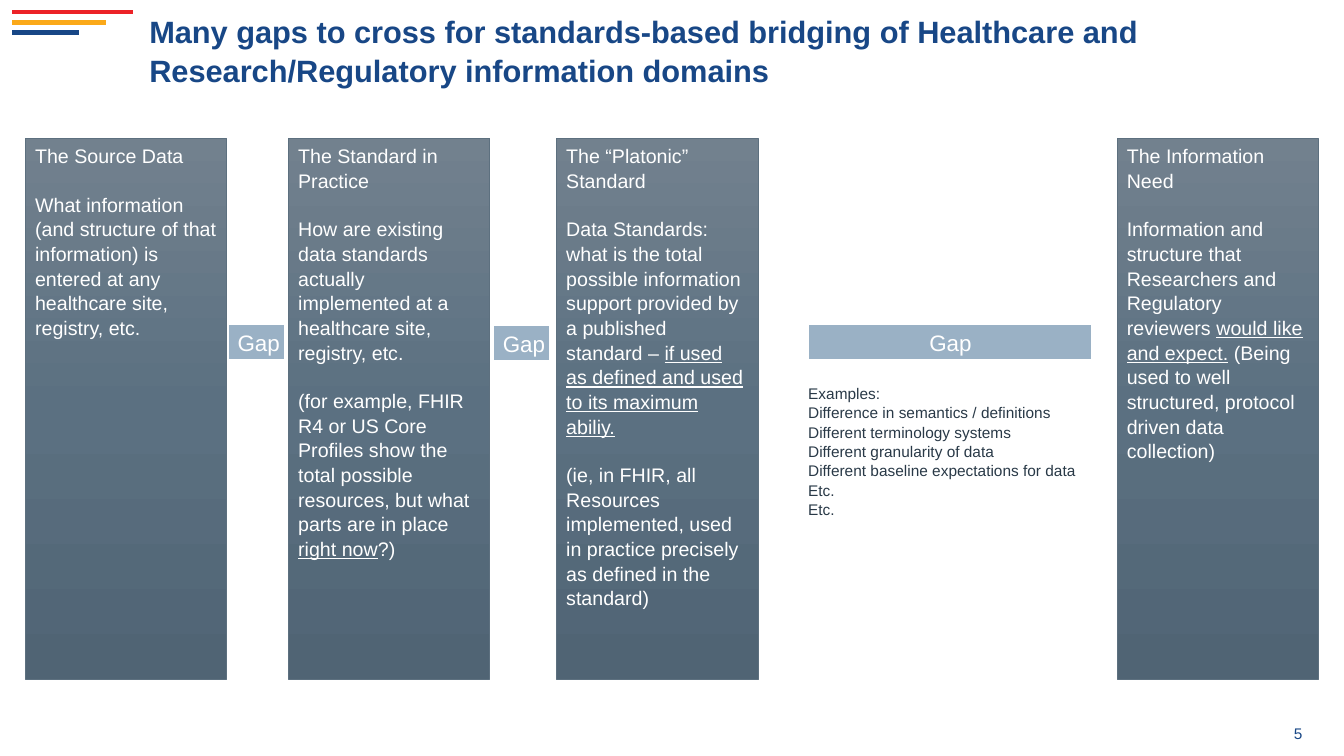
import copy
import dataclasses

import lxml.etree
import pptx
import pptx.dml.color
import pptx.enum.dml
import pptx.enum.shapes
import pptx.enum.text
import pptx.oxml.ns
import pptx.util

Pt = pptx.util.Pt
ALIGN = pptx.enum.text.PP_ALIGN
ANCHOR = pptx.enum.text.MSO_ANCHOR


def rgb(value):
    return pptx.dml.color.RGBColor.from_string(value)


@dataclasses.dataclass(frozen=True)
class Theme:
    font: str = "Arial"
    navy: str = "184786"
    red: str = "EC2227"
    amber: str = "FBA919"
    white: str = "FFFFFF"
    ink: str = "293947"
    gap_fill: str = "9AB1C5"
    column_line: str = "5D707F"
    column_gradient: tuple = ("72818E", "5B7081", "506474")
    title_size: float = 22
    gap_size: float = 16
    column_size: float = 14
    note_size: float = 11
    line_spacing: float = 1.05
    block_space: float = 16.9


class SlideBuilder:
    def __init__(self, slide, theme):
        self.slide = slide
        self.theme = theme

    def fill_text(self, frame, paragraphs, size, color, bold=False, align=ALIGN.LEFT,
                  anchor=ANCHOR.TOP, wrap=True, space=0, insets=(7.2, 3.6, 7.2, 3.6)):
        frame.word_wrap = wrap
        frame.auto_size = pptx.enum.text.MSO_AUTO_SIZE.NONE
        frame.vertical_anchor = anchor
        (frame.margin_left, frame.margin_top,
         frame.margin_right, frame.margin_bottom) = map(Pt, insets)
        for index, runs in enumerate(paragraphs):
            paragraph = frame.add_paragraph() if index else frame.paragraphs[0]
            paragraph.alignment = align
            paragraph.line_spacing = self.theme.line_spacing
            paragraph.space_before = Pt(space if index else 0)
            for text, underlined in runs:
                run = paragraph.add_run()
                run.text = text
                run.font.name = self.theme.font
                run.font.size = Pt(size)
                run.font.bold = bold
                run.font.underline = underlined
                run.font.color.rgb = rgb(color)

    def title(self, text, *box):
        shape = self.slide.shapes.title
        shape.left, shape.top, shape.width, shape.height = map(Pt, box)
        self.fill_text(shape.text_frame, [[(text, False)]], self.theme.title_size,
                       self.theme.navy, bold=True, insets=(0, 0, 0, 0))

    def text(self, lines, box, color, **options):
        shape = self.slide.shapes.add_textbox(*map(Pt, box))
        self.fill_text(shape.text_frame, [[(line, False)] for line in lines],
                       self.theme.note_size, color, **options)

    def rule(self, left, top, width, color):
        line = self.slide.shapes.add_connector(
            pptx.enum.shapes.MSO_CONNECTOR.STRAIGHT,
            Pt(left), Pt(top), Pt(left + width), Pt(top))
        line.line.color.rgb = rgb(color)
        line.line.width = Pt(3.5)
        lxml.etree.SubElement(line._element.spPr, pptx.oxml.ns.qn("a:effectLst"))

    def rectangle(self, box, line_color, line_width):
        shape = self.slide.shapes.add_shape(
            pptx.enum.shapes.MSO_SHAPE.RECTANGLE, *map(Pt, box))
        shape.shadow.inherit = False
        shape.line.color.rgb = rgb(line_color)
        shape.line.width = Pt(line_width)
        return shape

    def column(self, left, paragraphs):
        shape = self.rectangle((left, 98.6, 144, 386.6), self.theme.column_line, 0.5)
        shape.fill.gradient()
        shape.fill.gradient_angle = 270
        stop_list = next(shape._element.spPr.iter(pptx.oxml.ns.qn("a:gsLst")))
        stop_list.append(copy.deepcopy(stop_list[0]))
        for index, stop in enumerate(shape.fill.gradient_stops):
            stop.position = index / 2
            stop.color.rgb = rgb(self.theme.column_gradient[index])
        self.fill_text(shape.text_frame, paragraphs, self.theme.column_size,
                       self.theme.white, space=self.theme.block_space)

    def gap(self, left, top, width, align):
        shape = self.rectangle((left, top, width, 25.9), self.theme.white, 1.5)
        shape.fill.solid()
        shape.fill.fore_color.rgb = rgb(self.theme.gap_fill)
        self.fill_text(shape.text_frame, [[("Gap", False)]], self.theme.gap_size,
                       self.theme.white, align=align, anchor=ANCHOR.MIDDLE, wrap=False)


COLUMNS = [
    (797.8, [
        [("The Information Need", False)],
        [("Information and structure that Researchers and Regulatory reviewers ", False),
         ("would like and expect.", True),
         (" (Being used to well structured, protocol driven data collection)", False)],
    ]),
    (18, [
        [("The Source Data", False)],
        [("What information (and structure of that information) is entered at any "
          "healthcare site, registry, etc.", False)],
    ]),
    (205.9, [
        [("The Standard in Practice", False)],
        [("How are existing data standards actually implemented at a healthcare site, "
          "registry, etc.", False)],
        [("(for example, FHIR R4 or US Core Profiles show the total possible resources, "
          "but what parts are in place ", False),
         ("right now", True), ("?)", False)],
    ]),
    (397.4, [
        [("The “Platonic” Standard", False)],
        [("Data Standards: what is the total possible information support provided by "
          "a published standard – ", False),
         ("if used as defined and used to its maximum abiliy.", True)],
        [("(ie, in FHIR, all Resources implemented, used in practice precisely as "
          "defined in the standard)", False)],
    ]),
]
GAPS = [
    (162.7, 231.1, 41, ALIGN.LEFT),
    (352.1, 231.8, 41, ALIGN.LEFT),
    (577.4, 231.1, 203, ALIGN.CENTER),
]
EXAMPLES = [
    "Examples:",
    "Difference in semantics / definitions",
    "Different terminology systems",
    "Different granularity of data",
    "Different baseline expectations for data",
    "Etc.",
    "Etc.",
]


def main():
    presentation = pptx.Presentation()
    presentation.slide_width, presentation.slide_height = Pt(960), Pt(540)
    theme = Theme()
    builder = SlideBuilder(
        presentation.slides.add_slide(presentation.slide_layouts[5]), theme)

    builder.title("Many gaps to cross for standards-based bridging of Healthcare and "
                  "Research/Regulatory information domains", 106.6, 7.9, 795.6, 38.2)
    builder.text(["5"], (862.6, 515.5, 67.7, 16.6), theme.navy, align=ALIGN.RIGHT,
                 anchor=ANCHOR.MIDDLE, insets=(7.2, 3.6, 0, 3.6))
    rules = [(86.4, theme.red), (67, theme.amber), (48.2, theme.navy)]
    for index, (width, color) in enumerate(rules):
        builder.rule(8.6, 8.6 + 7.2 * index, width, color)
    for left, paragraphs in COLUMNS:
        builder.column(left, paragraphs)
    for gap in GAPS:
        builder.gap(*gap)
    builder.text(EXAMPLES, (570.2, 270, 203, 115.9), theme.ink, wrap=False)

    presentation.save("out.pptx")


if __name__ == "__main__":
    main()
